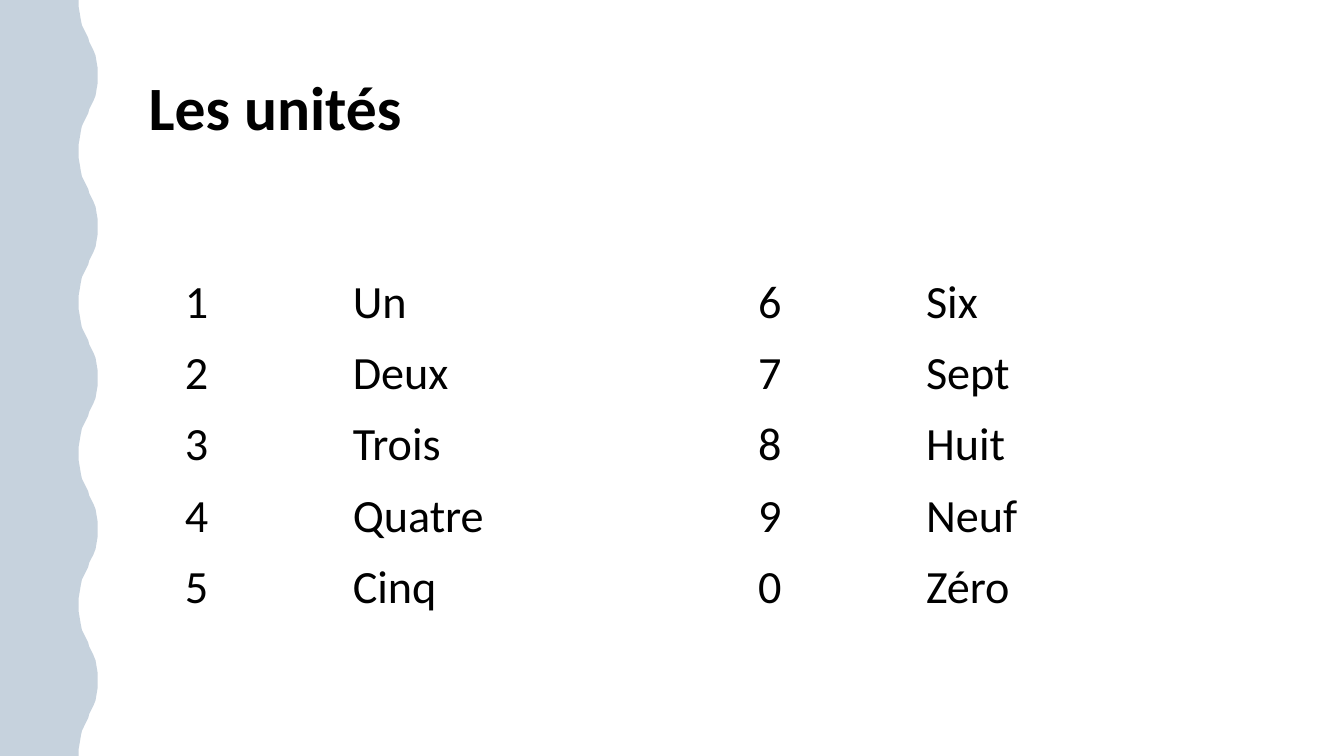
import lxml.etree
import pptx
import pptx.dml.color
import pptx.enum.text
import pptx.oxml.ns
import pptx.util

PX = 9525
THEME = {
    "font": "Calibri",
    "text": pptx.dml.color.RGBColor.from_string("000000"),
    "paper": pptx.dml.color.RGBColor.from_string("FFFFFF"),
    "wave": pptx.dml.color.RGBColor.from_string("1F4E79"),
    "wave_opacity": 25,
    "title_size": pptx.util.Pt(44),
    "number_size": pptx.util.Pt(33),
    "thin_border": pptx.util.Pt(1),
    "thick_border": pptx.util.Pt(3),
}


def apply_format(target, values):
    for name, value in values.items():
        setattr(target, name, value)


def add_xml(parent, tag, position=None, **attributes):
    element = lxml.etree.Element(pptx.oxml.ns.qn(tag), attributes)
    parent.insert(len(parent) if position is None else position, element)
    return element


deck = pptx.Presentation()
apply_format(deck, {"slide_width": 1280 * PX, "slide_height": 720 * PX})
slide = deck.slides.add_slide(deck.slide_layouts[5])

heading = slide.shapes.title
apply_format(heading, {"left": 132 * PX, "top": 69 * PX, "width": 1068 * PX, "height": 138 * PX})
heading.text_frame.text = "Les unités"
apply_format(heading.text_frame, {
    "vertical_anchor": pptx.enum.text.MSO_ANCHOR.TOP,
    "word_wrap": True,
})
heading_line = heading.text_frame.paragraphs[0]
apply_format(heading_line, {"alignment": pptx.enum.text.PP_ALIGN.LEFT, "line_spacing": 0.9})
apply_format(heading_line.runs[0].font, {
    "name": THEME["font"], "size": THEME["title_size"], "bold": True,
})
heading_line.runs[0].font.color.rgb = THEME["text"]

WAVE_COUNT = 5
WAVE_HEIGHT = 144
rising = [(75, 0), (75, 7), (76, 13), (77, 19), (78, 24), (80, 28), (82, 32), (84, 36),
          (85, 40), (87, 44), (89, 48), (91, 53), (92, 59), (93, 65), (93, 72)]
falling = [(x, WAVE_HEIGHT - y) for x, y in reversed(rising[:-1])]
wave_edge = [(x, y + WAVE_HEIGHT * wave)
             for wave in range(WAVE_COUNT) for x, y in rising + falling]

margin = slide.shapes.add_group_shape()
for colour, opacity in ((THEME["paper"], 100), (THEME["wave"], THEME["wave_opacity"])):
    outline = margin.shapes.build_freeform(0, 0, scale=PX)
    outline.add_line_segments(wave_edge + [(0, 720)], close=True)
    band = outline.convert_to_shape()
    band.shadow.inherit = False
    band.fill.solid()
    band.fill.fore_color.rgb = colour
    band.line.fill.background()
    if opacity < 100:
        tint = band.fill._xPr.find(".//" + pptx.oxml.ns.qn("a:srgbClr"))
        add_xml(tint, "a:alpha", val=str(opacity * 1000))

units = [
    ("1", "Un", "6", "Six"),
    ("2", "Deux", "7", "Sept"),
    ("3", "Trois", "8", "Huit"),
    ("4", "Quatre", "9", "Neuf"),
    ("5", "Cinq", "0", "Zéro"),
]
column_widths = [160, 386, 160, 302]
ROW_HEIGHT = 68
units_table = slide.shapes.add_table(
    len(units), len(column_widths), 164 * PX, 255 * PX,
    sum(column_widths) * PX, ROW_HEIGHT * len(units) * PX).table
apply_format(units_table, {"first_row": False, "horz_banding": False})
for column, width in zip(units_table.columns, column_widths):
    column.width = width * PX

for row_index, entries in enumerate(units):
    units_table.rows[row_index].height = ROW_HEIGHT * PX
    for column_index, entry in enumerate(entries):
        cell = units_table.cell(row_index, column_index)
        cell.text = entry
        apply_format(cell, {
            "margin_left": 12 * PX, "margin_right": 12 * PX,
            "margin_top": 6 * PX, "margin_bottom": 6 * PX,
            "vertical_anchor": pptx.enum.text.MSO_ANCHOR.TOP,
        })
        cell.fill.solid()
        cell.fill.fore_color.rgb = THEME["paper"]
        entry_font = cell.text_frame.paragraphs[0].runs[0].font
        apply_format(entry_font, {
            "name": THEME["font"], "size": THEME["number_size"], "bold": False,
        })
        entry_font.color.rgb = THEME["text"]
        for position, side in enumerate(("L", "R", "T", "B")):
            under_first = (row_index, side) in ((0, "B"), (1, "T"))
            weight = THEME["thick_border"] if under_first else THEME["thin_border"]
            border = add_xml(cell._tc.tcPr, "a:ln" + side, position, w=str(int(weight)))
            border_fill = add_xml(border, "a:solidFill")
            add_xml(border_fill, "a:srgbClr", val=str(THEME["paper"]))

deck.save("out.pptx")
